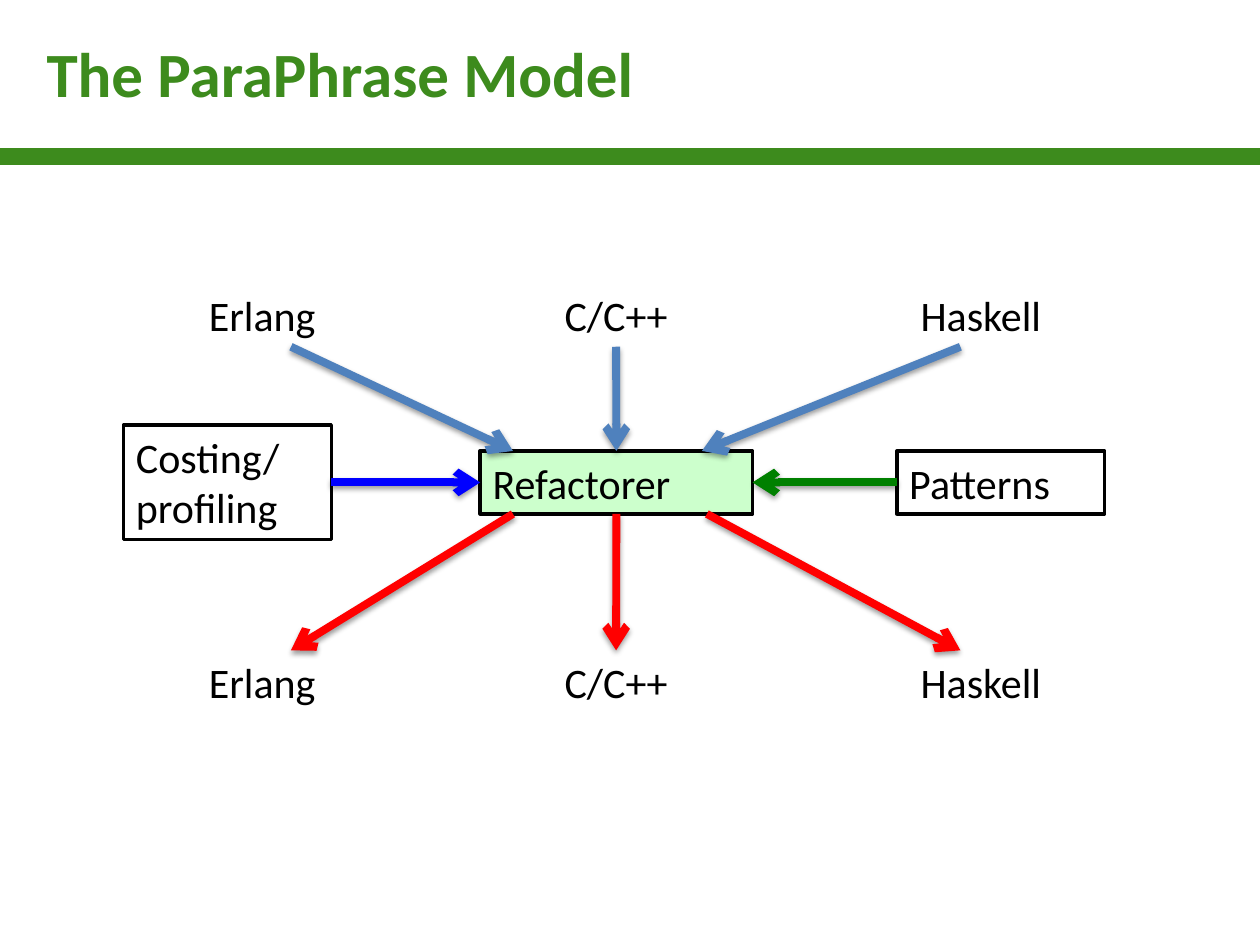
import pptx
import pptx.util
import pptx.dml.color
import pptx.enum.shapes
import pptx.enum.text
import lxml.etree
from pptx.oxml.ns import qn

Cm = pptx.util.Cm
Pt = pptx.util.Pt
ALIGN = pptx.enum.text.PP_ALIGN
ANCHOR = pptx.enum.text.MSO_ANCHOR
STRAIGHT = pptx.enum.shapes.MSO_CONNECTOR.STRAIGHT
RECT = pptx.enum.shapes.MSO_SHAPE.RECTANGLE
color = pptx.dml.color.RGBColor.from_string

deck = pptx.Presentation()
deck.slide_width = Cm(25.4)
deck.slide_height = Cm(19.05)
slide = deck.slides.add_slide(deck.slide_layouts[6])
shapes = slide.shapes


def add_box(text, left, top, width, height, fill, edge, align=ALIGN.LEFT):
    box = shapes.add_shape(RECT, Cm(left), Cm(top), Cm(width), Cm(height))
    box.shadow.inherit = False
    box.fill.solid()
    box.fill.fore_color.rgb = color(fill)
    if edge:
        box.line.color.rgb = color(edge)
        box.line.width = Pt(2)
    else:
        box.line.fill.background()
    frame = box.text_frame
    frame.word_wrap = True
    frame.vertical_anchor = ANCHOR.TOP
    frame.text = text
    para = frame.paragraphs[0]
    para.alignment = align
    font = para.runs[0].font
    font.name = "Calibri"
    font.size = Pt(24)
    font.color.rgb = color("000000")
    return box


def add_arrow(start, end, hue):
    ends = []
    for shape, side, x in (start, end):
        mid = shape.left + shape.width // 2 if x is None else Cm(x)
        ends += [mid, shape.top + (shape.height if side == 2 else 0)]
    arrow = shapes.add_connector(STRAIGHT, *ends)
    if start[2] is None:
        arrow.begin_connect(start[0], start[1])
    if end[2] is None:
        arrow.end_connect(end[0], end[1])
    arrow.line.color.rgb = color(hue)
    arrow.line.width = Pt(4.5)
    line = arrow.line._get_or_add_ln()
    lxml.etree.SubElement(line, qn("a:tailEnd")).set("type", "arrow")


rule = shapes.add_connector(STRAIGHT, Cm(-0.08), Cm(3.15), Cm(25.43), Cm(3.15))
rule.line.color.rgb = color("3D8B1D")
rule.line.width = Pt(10)
lxml.etree.SubElement(rule._element.spPr, qn("a:effectLst"))

title = shapes.add_textbox(Cm(0.69), Cm(0.18), Cm(22), Cm(2.57))
frame = title.text_frame
frame.word_wrap = True
frame.vertical_anchor = ANCHOR.MIDDLE
frame.text = "The ParaPhrase Model"
font = frame.paragraphs[0].runs[0].font
font.name = "Calibri"
font.size = Pt(36)
font.bold = True
font.color.rgb = color("3D8B1D")

core = add_box("Refactorer", 9.68, 9.09, 5.49, 1.27, "CCFFCC", "000000")
patterns = add_box("Patterns", 18.08, 9.09, 4.19, 1.27, "FFFFFF", "000000")
costing = add_box("Costing/profiling", 2.49, 8.57, 4.19, 2.31, "FFFFFF", "000000")

langs = [
    ("Erlang", 3.96, 3.81, ALIGN.LEFT, 10.34, 10.34),
    ("C/C++", 10.59, 3.66, ALIGN.CENTER, None, None),
    ("Haskell", 17.48, 3.76, ALIGN.RIGHT, 14.15, 14.25),
]
for name, left, width, align, enter, leave in langs:
    edge = None if name == "Erlang" else "FFFFFF"
    source = add_box(name, left, 5.72, width, 1.27, "FFFFFF", edge, align)
    target = add_box(name, left, 13.11, width, 1.27, "FFFFFF", "FFFFFF", align)
    add_arrow((source, 2, None), (core, 0, enter), "4F81BD")
    add_arrow((core, 2, leave), (target, 0, None), "FF0000")

add_arrow((patterns, 1, None), (core, 3, None), "008000")
add_arrow((costing, 3, None), (core, 1, None), "0000FF")

deck.save("out.pptx")
